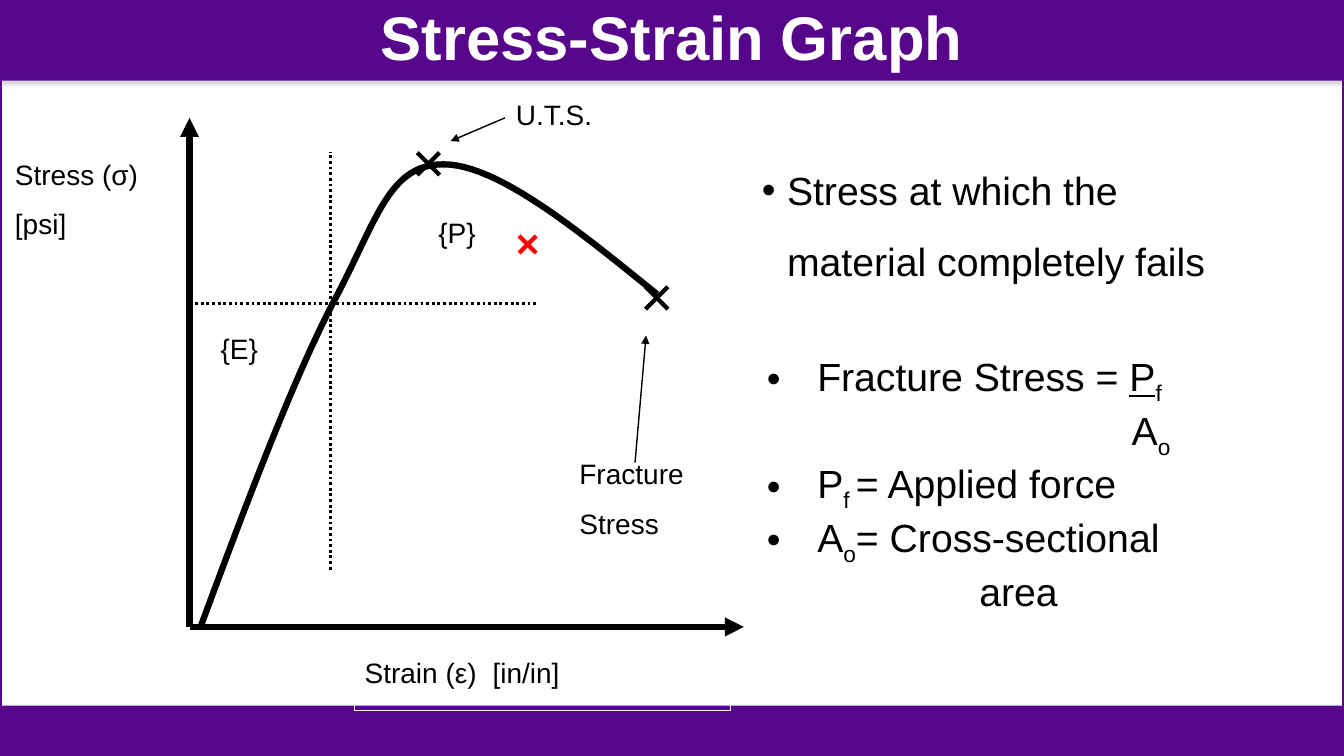
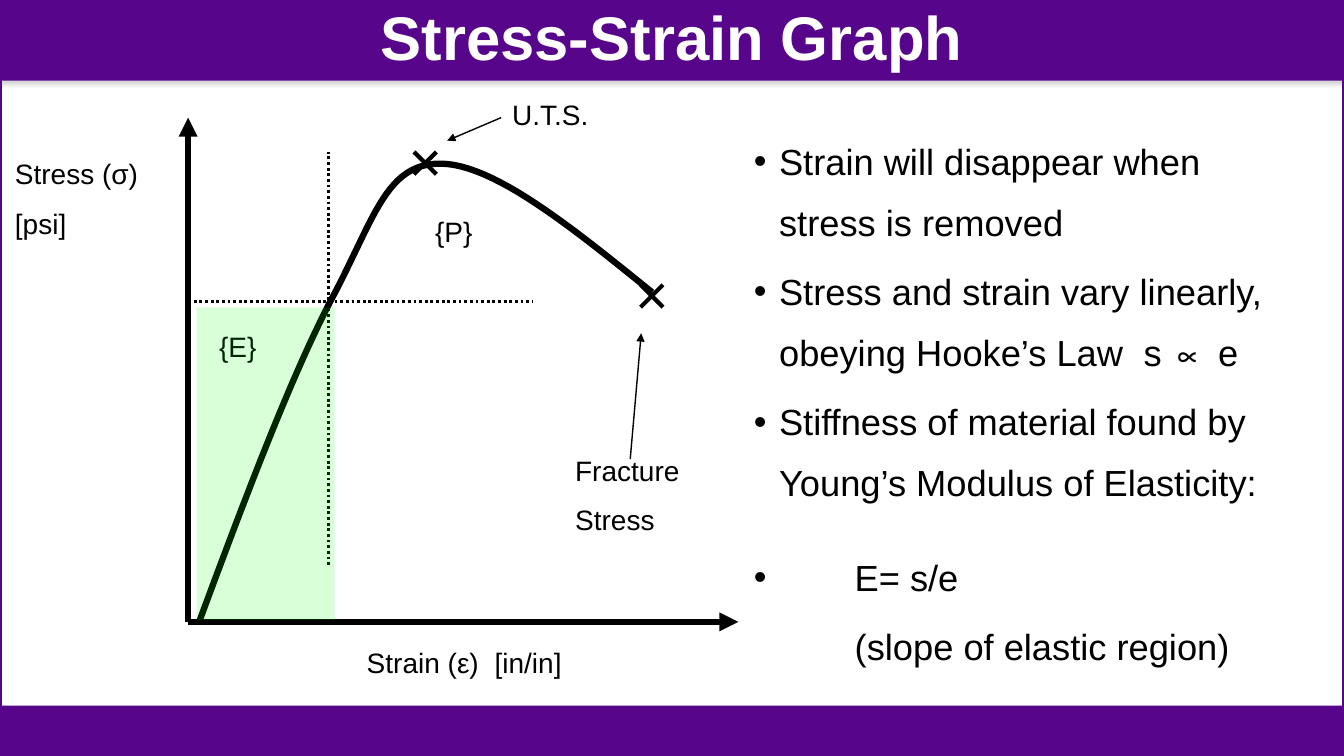
from collections import namedtuple
from dataclasses import dataclass

from lxml import etree
from pptx import Presentation
from pptx.dml.color import RGBColor
from pptx.enum.dml import MSO_LINE
from pptx.enum.shapes import MSO_CONNECTOR, MSO_SHAPE
from pptx.enum.text import MSO_ANCHOR, MSO_AUTO_SIZE, PP_ALIGN
from pptx.oxml.ns import qn
from pptx.util import Pt

RECTANGLE = MSO_SHAPE.RECTANGLE
STRAIGHT = MSO_CONNECTOR.STRAIGHT
DOTTED = MSO_LINE.ROUND_DOT
TOP, MIDDLE = MSO_ANCHOR.TOP, MSO_ANCHOR.MIDDLE
LEFT, CENTER = PP_ALIGN.LEFT, PP_ALIGN.CENTER
NO_AUTOSIZE = MSO_AUTO_SIZE.NONE
TITLE_ONLY = 5

Box = namedtuple("Box", "left top width height")
SUBSCRIPT = {"baseline": "-25000"}
RAW_FORMATS = ("baseline", "spc")


@dataclass(frozen=True)
class Theme:
    font: str = "Arial"
    purple: RGBColor = RGBColor(0x57, 0x06, 0x8C)
    white: RGBColor = RGBColor(0xFF, 0xFF, 0xFF)
    black: RGBColor = RGBColor(0, 0, 0)
    red: RGBColor = RGBColor(0xFF, 0, 0)
    green: RGBColor = RGBColor(0, 0xFF, 0)
    title: float = 44
    body: float = 28
    compact: float = 25.9
    label: float = 20


THEME = Theme()
SLIDE = Box(0, 0, 960, 540)
TITLE_BAND = Box(0, 0, 960, 57.6)
FOOTER_BAND = Box(0, 504, 960, 36)
GRAPH_SIZE = (528, 381.6)
ORIGIN = (131.8, 381.6)
PEAK = (302.4, 50.8)
FRACTURE = (465.5, 146.6)
CURVE = [
    [(139.7, 381.6), (173.5, 290.2), (208.1, 198.8), (237.6, 144)],
    [(237.6, 144), (266.4, 88.6), (275, 51.2), (313.2, 51.2)],
    [(313.2, 51.2), (351.4, 51.2), (408.2, 97.2), (465.8, 144)],
]
CURVE_STEPS = 24
LINES = [
    (ORIGIN, (527.8, 381.6), 4.5, {"arrow": True}),
    (ORIGIN, (131.8, 18), 4.5, {"arrow": True}),
    ((131.8, 150.5), (380.2, 150.5), 2, {"dash": DOTTED}),
    ((232.6, 340.6), (232.6, 42.5), 2, {"dash": DOTTED}),
    ((450, 264.2), (457.9, 173.5), 1, {"arrow": True}),
    ((357.1, 18), (318.2, 34.6), 1, {"arrow": True}),
]
LABELS = [
    (["Stress (σ)", "[psi]"], Box(0, 42.5, 131.8, 92.9)),
    (["Fracture", "Stress"], Box(403.2, 256.3, 115.2, 92.9)),
    (["U.T.S."], Box(357.8, 0, 92.2, 43)),
    (["{P}"], Box(302.4, 84.2, 53.3, 43)),
    (["{E}"], Box(146.9, 167, 53.3, 43)),
]


def points(box):
    return [Pt(value) for value in box]


def add_rectangle(page, box, fill=None, line=None, width=1):
    shape = page.shapes.add_shape(RECTANGLE, *points(box))
    shape.shadow.inherit = False
    if fill is None:
        shape.fill.background()
    else:
        shape.fill.solid()
        shape.fill.fore_color.rgb = fill
    if line is None:
        shape.line.fill.background()
    else:
        shape.line.color.rgb = line
        shape.line.width = Pt(width)
    return shape


def set_transparency(shape, percent):
    color = shape.element.spPr.find(qn("a:solidFill"))[0]
    etree.SubElement(color, qn("a:alpha"), val=str((100 - percent) * 1000))


def add_band_shadow(shape):
    effects = shape.element.spPr.find(qn("a:effectLst"))
    shadow = etree.SubElement(effects, qn("a:outerShdw"), blurRad=str(Pt(3.1)),
                              dist=str(Pt(1.8)), dir="5400000", rotWithShape="0")
    color = etree.SubElement(shadow, qn("a:srgbClr"), val="808080")
    etree.SubElement(color, qn("a:alpha"), val="35000")


def add_line(page, start, end, width, color=THEME.black, dash=None, arrow=False):
    line = page.shapes.add_connector(STRAIGHT, *points(start + end))
    line.line.color.rgb = color
    line.line.width = Pt(width)
    if dash is not None:
        line.line.dash_style = dash
    properties = line.element.spPr
    if arrow:
        etree.SubElement(properties.find(qn("a:ln")), qn("a:tailEnd"), type="triangle")
    etree.SubElement(properties, qn("a:effectLst"))


def add_cross(page, center, half, color=THEME.black):
    x, y = center
    for rise in (half, -half):
        add_line(page, (x - half, y - rise), (x + half, y + rise), 3, color)


def set_indent(para, margin, hanging, bullet):
    properties = para._p.get_or_add_pPr()
    properties.set("marL", str(Pt(margin)))
    properties.set("indent", str(Pt(-hanging)))
    if bullet:
        etree.SubElement(properties, qn("a:buFont"), typeface=THEME.font)
        etree.SubElement(properties, qn("a:buChar"), char="•")
    else:
        etree.SubElement(properties, qn("a:buNone"))


def add_spans(para, spans, size, color=THEME.black, bold=False):
    for text, extra in spans:
        span = para.add_run()
        span.text = text
        formats = {"name": THEME.font, "size": Pt(size), "bold": bold, **extra}
        for key, value in formats.items():
            if key in RAW_FORMATS:
                span._r.get_or_add_rPr().set(key, value)
            else:
                setattr(span.font, key, value)
        span.font.color.rgb = color


def fill_text(shape, paragraphs, size, spacing=1.0):
    frame = shape.text_frame
    frame.word_wrap = True
    frame.auto_size = NO_AUTOSIZE
    frame.vertical_anchor = TOP
    for index, (spans, layout) in enumerate(paragraphs):
        para = frame.add_paragraph() if index else frame.paragraphs[0]
        margin = layout.get("margin", 0)
        bullet = layout.get("bullet", False)
        set_indent(para, margin, margin if bullet else 0, bullet)
        para.alignment = LEFT
        para.line_spacing = spacing
        para.space_before = Pt(layout.get("before", 0) if index else 0)
        add_spans(para, spans, size)


def add_text(page, box, paragraphs, size, spacing=1.0):
    fill_text(page.shapes.add_textbox(*points(box)), paragraphs, size, spacing)


def draw_frame(layout, page):
    bands = [add_rectangle(page, box, THEME.purple) for box in (TITLE_BAND, FOOTER_BAND)]
    for band in bands:
        add_band_shadow(band)
    border = add_rectangle(page, SLIDE, line=THEME.purple, width=2.25)
    for number, shape in enumerate([*bands, border], start=101):
        shape.element.nvSpPr.cNvPr.set("id", str(number))
        layout.shapes.element.append(shape.element)


def set_title(page, box, text):
    title = page.shapes.title
    title.left, title.top, title.width, title.height = points(box)
    frame = title.text_frame
    frame.word_wrap = True
    frame.auto_size = NO_AUTOSIZE
    frame.vertical_anchor = MIDDLE
    para = frame.paragraphs[0]
    para.alignment = CENTER
    para.line_spacing = 0.9
    add_spans(para, [(text, {})], THEME.title, THEME.white, bold=True)


def draw_curve(page, place):
    samples = []
    for start, pull, push, end in CURVE:
        for step in range(CURVE_STEPS + 1):
            t = step / CURVE_STEPS
            weights = ((1 - t) ** 3, 3 * t * (1 - t) ** 2, 3 * t * t * (1 - t), t ** 3)
            knots = (start, pull, push, end)
            x, y = (sum(w * k[axis] for w, k in zip(weights, knots)) for axis in (0, 1))
            samples.append(tuple(points(place((x, y)))))
    builder = page.shapes.build_freeform(*samples[0], scale=1.0)
    builder.add_line_segments(samples[1:], close=False)
    curve = builder.convert_to_shape()
    curve.shadow.inherit = False
    curve.fill.background()
    curve.line.color.rgb = THEME.black
    curve.line.width = Pt(4.5)


def draw_graph(page, box, strain_box):
    x_scale, y_scale = box.width / GRAPH_SIZE[0], box.height / GRAPH_SIZE[1]

    def place(point):
        return box.left + point[0] * x_scale, box.top + point[1] * y_scale

    strain = add_rectangle(page, strain_box, line=THEME.white)
    strain_spans = [("Strain (ε)", {}), (" ", {"spc": "560"}), ("[in/in]", {})]
    fill_text(strain, [(strain_spans, {})], THEME.label)
    draw_curve(page, place)
    for start, end, width, style in LINES:
        add_line(page, place(start), place(end), width, **style)
    for texts, area in LABELS:
        label_box = Box(*place(area[:2]), area.width * x_scale, area.height * y_scale)
        paragraphs = [([(text, {})], {"before": 11.5}) for text in texts]
        add_text(page, label_box, paragraphs, THEME.label)
    for center in (PEAK, FRACTURE):
        add_cross(page, place(center), 8)


def fracture_slide(page):
    draw_graph(page, Box(3.6, 66.2, 528, 381.6), Box(253.4, 464.4, 268.6, 43.2))
    definition = "Stress at which the material completely fails"
    add_text(page, Box(537.1, 98.6, 332.6, 108.7),
             [([(definition, {})], {"margin": 18, "bullet": True})], THEME.body, 1.5)
    add_cross(page, (376.9, 174.6), 6.1, THEME.red)
    item = {"margin": 36, "bullet": True}
    formula = [
        ([("Fracture Stress = ", {}), ("P", {"underline": True}), ("f", SUBSCRIPT)], item),
        ([("A", {}), ("o", SUBSCRIPT)], {"margin": 260.6}),
        ([("P", {}), ("f ", SUBSCRIPT), ("= Applied force", {})], item),
        ([("A", {}), ("o", SUBSCRIPT), ("= Cross-sectional", {})], item),
        ([("area", {})], {"margin": 151.8}),
    ]
    add_text(page, Box(540.7, 248.4, 419.3, 177.1), formula, THEME.body)


def elastic_slide(page):
    draw_graph(page, Box(3.6, 66.2, 524, 378), Box(254.9, 457.2, 266.4, 43.2))
    item = {"margin": 18, "bullet": True, "before": 6}
    hooke = [("Stress and strain vary linearly, obeying Hooke’s Law", {}),
             (" ", {"spc": "720"}), ("s ∝ e", {})]
    paragraphs = [
        ([("Strain will disappear when stress is removed", {})], item),
        (hooke, item),
        ([("Stiffness of material found by Young’s Modulus of Elasticity:", {})], item),
        ([("E= s/e", {})], {"margin": 72, "bullet": True, "before": 24}),
        ([("(slope of elastic region)", {})], {"margin": 72, "before": 6}),
    ]
    add_text(page, Box(531.4, 83.5, 392.4, 398.9), paragraphs, THEME.compact, 1.4)
    region = add_rectangle(page, Box(140.4, 219.6, 98.6, 223.2), THEME.green)
    set_transparency(region, 85)


def main():
    deck = Presentation()
    deck.slide_width, deck.slide_height = Pt(SLIDE.width), Pt(SLIDE.height)
    layout = deck.slide_layouts[TITLE_ONLY]
    for index, build in enumerate((fracture_slide, elastic_slide)):
        page = deck.slides.add_slide(layout)
        if index == 0:
            draw_frame(layout, page)
        set_title(page, TITLE_BAND, "Stress-Strain Graph")
        build(page)
    deck.save("out.pptx")


if __name__ == "__main__":
    main()
